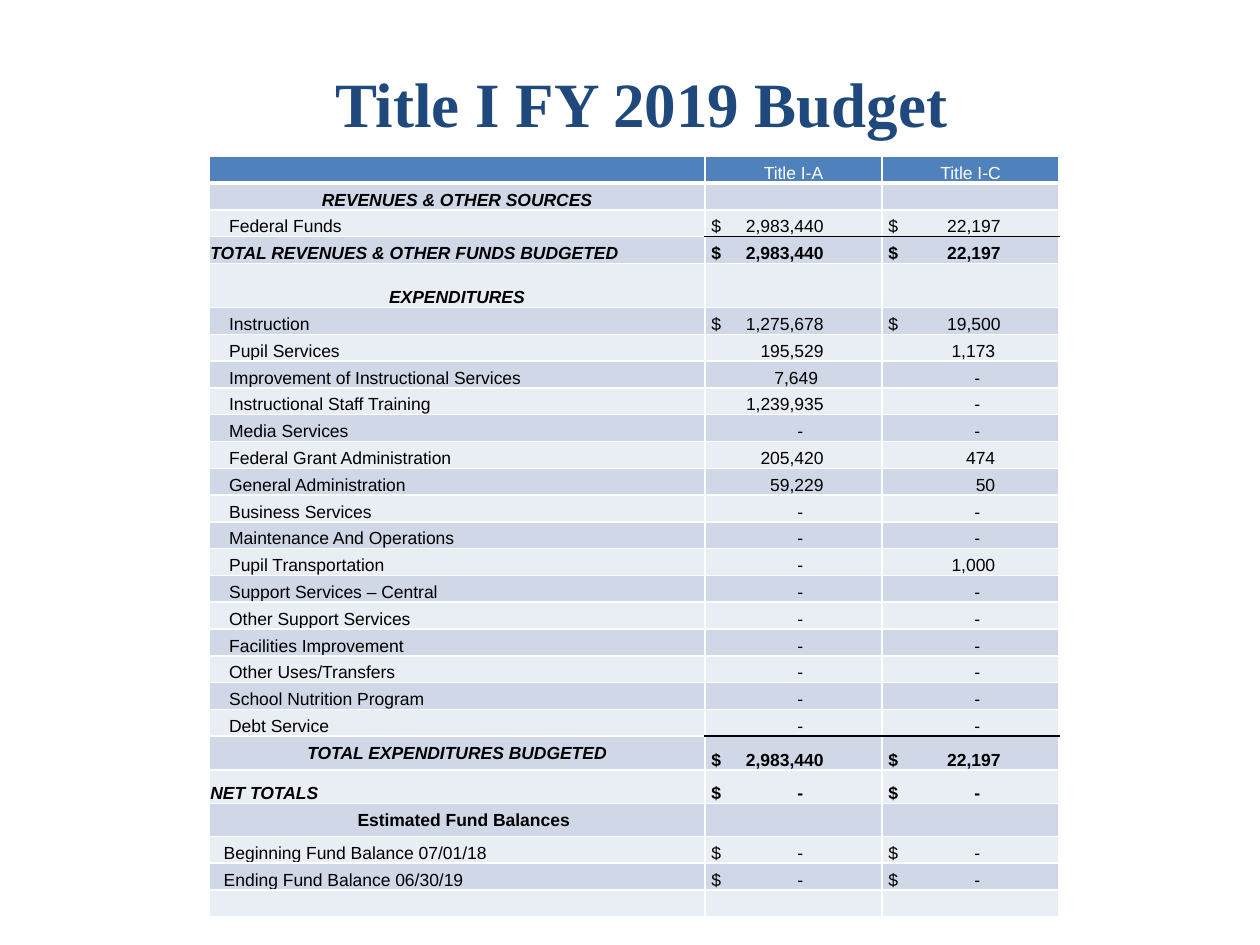
import dataclasses

import lxml.etree
import pptx
import pptx.dml.color
import pptx.enum.text
import pptx.oxml.ns
import pptx.util

Cm, Pt = pptx.util.Cm, pptx.util.Pt
RGB = pptx.dml.color.RGBColor.from_string
qn = pptx.oxml.ns.qn
ALIGN = pptx.enum.text.PP_ALIGN
ANCHOR = pptx.enum.text.MSO_ANCHOR


@dataclasses.dataclass(frozen=True)
class Theme:
    navy: str = "1F497D"
    blue: str = "4F81BD"
    white: str = "FFFFFF"
    black: str = "000000"
    bands: tuple = ("E9EDF4", "D0D8E8")
    serif: str = "Times New Roman"
    sans: str = "Arial"
    large: int = 36
    small: int = 10


@dataclasses.dataclass(frozen=True)
class Label:
    """How the first cell of a row is set; lengths in cm."""
    bold: bool = False
    italic: bool = False
    align: int = ALIGN.LEFT
    anchor: int = ANCHOR.BOTTOM
    left: float = 0.03
    height: float = 0.54


HEAD = Label()
PART = Label(True, True, ALIGN.CENTER)
SPEND = dataclasses.replace(PART, height=0.89)
ITEM = Label(left=0.41)
TOTAL = Label(True, True)
SUM = dataclasses.replace(PART, anchor=ANCHOR.MIDDLE, height=0.68)
NET = dataclasses.replace(TOTAL, height=0.68)
FUNDS = Label(True, False, ALIGN.CENTER, ANCHOR.MIDDLE, 0.3, 0.66)
BALANCE = Label(left=0.3)

ROWS = [
    (HEAD, "", "Title I-A", "Title I-C"),
    (PART, "REVENUES & OTHER SOURCES", "", ""),
    (ITEM, "Federal Funds", "$2,983,440", "$22,197"),
    (TOTAL, "TOTAL REVENUES & OTHER FUNDS BUDGETED", "$2,983,440", "$22,197"),
    (SPEND, "EXPENDITURES", "", ""),
    (ITEM, "Instruction", "$1,275,678", "$19,500"),
    (ITEM, "Pupil Services", "195,529", "1,173"),
    (ITEM, "Improvement of Instructional Services", "7,649", "-"),
    (ITEM, "Instructional Staff Training", "1,239,935", "-"),
    (ITEM, "Media Services", "-", "-"),
    (ITEM, "Federal Grant Administration", "205,420", "474"),
    (ITEM, "General Administration", "59,229", "50"),
    (ITEM, "Business Services", "-", "-"),
    (ITEM, "Maintenance And Operations", "-", "-"),
    (ITEM, "Pupil Transportation", "-", "1,000"),
    (ITEM, "Support Services – Central", "-", "-"),
    (ITEM, "Other Support Services", "-", "-"),
    (ITEM, "Facilities Improvement", "-", "-"),
    (ITEM, "Other Uses/Transfers", "-", "-"),
    (ITEM, "School Nutrition Program", "-", "-"),
    (ITEM, "Debt Service", "-", "-"),
    (SUM, "TOTAL EXPENDITURES BUDGETED", "$2,983,440", "$22,197"),
    (NET, "NET TOTALS", "$-", "$-"),
    (FUNDS, "Estimated Fund Balances", "", ""),
    (BALANCE, "Beginning Fund Balance 07/01/18", "$-", "$-"),
    (BALANCE, "Ending Fund Balance 06/30/19", "$-", "$-"),
    (HEAD, "", "", ""),
]
WIDTHS = (10, 3.57, 3.57)
INSET = 0.13  # left edge of the dollar signs


class Page:
    def __init__(self, slide, theme):
        self.slide, self.theme = slide, theme

    def font(self, para, face, size, color, bold=False, italic=False):
        font = para.font
        font.name, font.size = face, Pt(size)
        font.bold, font.italic = bold, italic
        font.color.rgb = RGB(color)

    def title(self, text, left, top, width, height):
        box = self.slide.shapes.add_textbox(Cm(left), Cm(top), Cm(width), Cm(height))
        frame = box.text_frame
        frame.word_wrap = True
        frame.vertical_anchor = ANCHOR.MIDDLE
        para = frame.paragraphs[0]
        para.text, para.alignment = text, ALIGN.CENTER
        self.font(para, self.theme.serif, self.theme.large, self.theme.navy, True)

    def border(self, cell, sides):
        """Draw the sides, given as {side: (color, points)}."""
        props = cell._tc.get_or_add_tcPr()
        for place, side in enumerate("LRTB"):
            color, width = sides.get(side, (self.theme.white, 1))
            line = lxml.etree.Element(qn(f"a:ln{side}"), w=str(Pt(width)))
            fill = lxml.etree.SubElement(line, qn("a:solidFill"))
            lxml.etree.SubElement(fill, qn("a:srgbClr"), val=color)
            props.insert(place, line)

    def cell(self, cell, text, fill, color, style):
        cell.margin_left = Cm(style.left)
        cell.margin_top = cell.margin_right = Cm(0.03)
        cell.margin_bottom = 0
        cell.vertical_anchor = style.anchor
        cell.fill.solid()
        cell.fill.fore_color.rgb = RGB(fill)
        para = cell.text_frame.paragraphs[0]
        para.alignment = style.align
        if text:
            para.text = text
        else:
            lxml.etree.SubElement(para._p, qn("a:endParaRPr"), sz=str(self.theme.small * 100))
        self.font(para, self.theme.sans, self.theme.small, color, style.bold, style.italic)

    def amount(self, cell, text, fill, bold):
        """Line up the dollar sign on the left and the figure on the right."""
        figure = text.lstrip("$")
        signed = figure != text
        edge = 1.98 if figure == "-" else 2.28 if not signed and len(figure) < 6 else 2.39
        if signed:
            props = cell.text_frame.paragraphs[0]._p.get_or_add_pPr()
            tabs = lxml.etree.SubElement(props, qn("a:tabLst"))
            lxml.etree.SubElement(tabs, qn("a:tab"), pos=str(Cm(edge - INSET)), algn="r")
            text = "$\t" + figure
        align = ALIGN.LEFT if signed or not text else ALIGN.RIGHT
        style = Label(bold=bold, align=align, left=INSET)
        self.cell(cell, text, fill, self.theme.black, style)
        if align == ALIGN.RIGHT:
            cell.margin_right = Cm(WIDTHS[1] - edge)

    def table(self, rows, left, top):
        theme = self.theme
        height = sum(row[0].height for row in rows)
        table = self.slide.shapes.add_table(
            len(rows), len(WIDTHS), Cm(left), Cm(top), Cm(sum(WIDTHS)), Cm(height)).table
        table.first_row = table.horz_banding = False
        for column, width in zip(table.columns, WIDTHS):
            column.width = Cm(width)
        totals = [place for place, row in enumerate(rows) if row[0] in (TOTAL, SUM)]
        rule = (theme.black, 1)
        for y, (style, *texts) in enumerate(rows):
            table.rows[y].height = Cm(style.height)
            fill = theme.bands[y % 2]
            for x, text in enumerate(texts):
                cell = table.cell(y, x)
                sides = {}
                if y == 0:
                    self.cell(cell, text, theme.blue, theme.white, Label(align=ALIGN.CENTER))
                    sides["B"] = (theme.white, 3)
                elif x == 0:
                    self.cell(cell, text, fill, theme.black, style)
                else:
                    self.amount(cell, text, fill, style.bold)
                    if y in totals:
                        sides["T"] = rule
                    if y + 1 in totals:
                        sides["B"] = rule
                if y == 1:
                    sides["T"] = (theme.white, 3)
                self.border(cell, sides)


def main():
    deck = pptx.Presentation()
    deck.slide_width, deck.slide_height = Cm(25.4), Cm(19.05)
    page = Page(deck.slides.add_slide(deck.slide_layouts[6]), Theme())
    page.title("Title I FY 2019 Budget", 1.5, 1.02, 22.86, 2.08)
    page.table(ROWS, 4.21, 3.15)
    deck.save("out.pptx")


if __name__ == "__main__":
    main()
